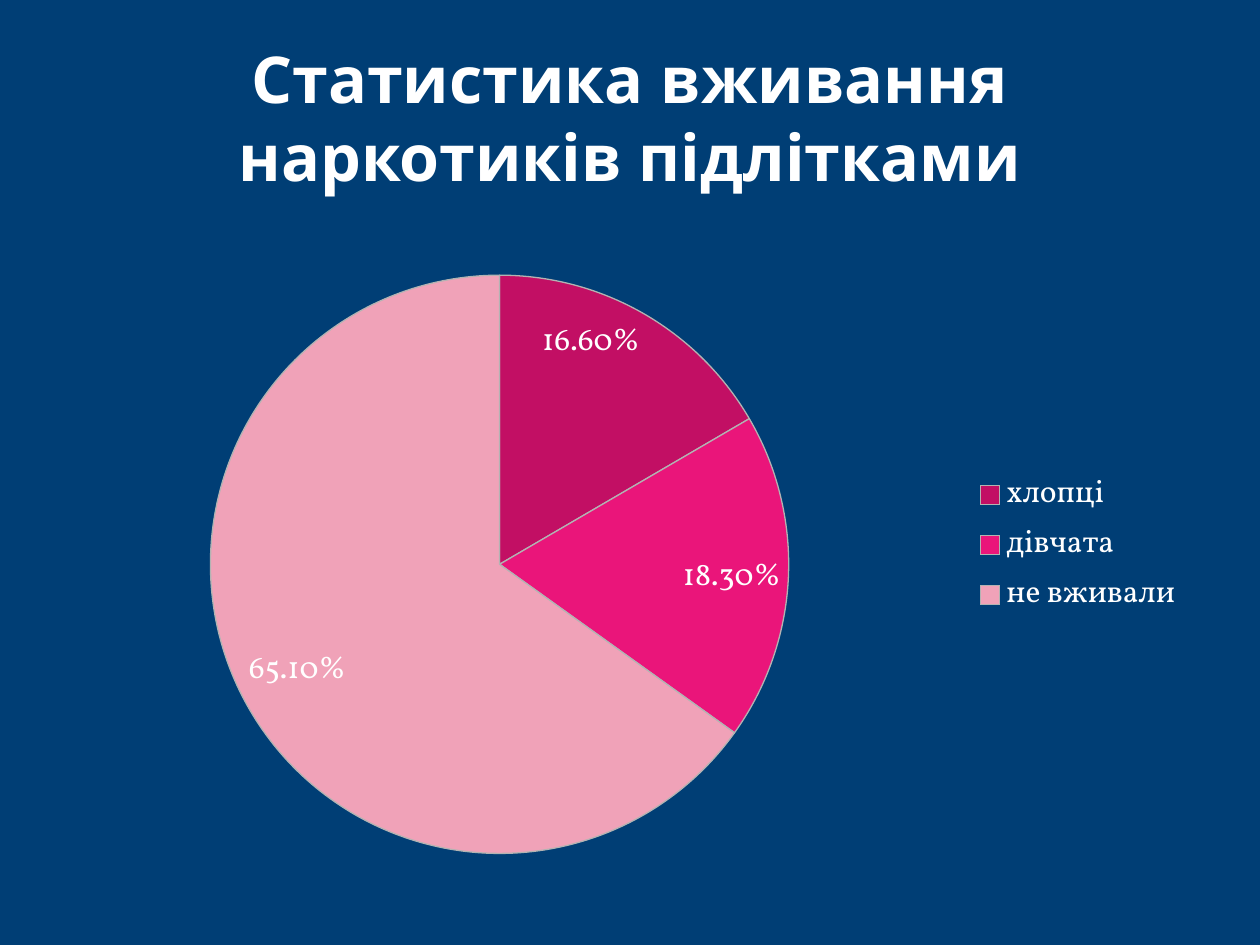
from lxml.etree import SubElement
from pptx import Presentation
from pptx.chart.data import CategoryChartData
from pptx.dml.color import RGBColor
from pptx.enum.chart import XL_CHART_TYPE as ChartType, XL_LABEL_POSITION as LabelPosition
from pptx.enum.chart import XL_LEGEND_POSITION as LegendPosition
from pptx.enum.text import MSO_ANCHOR as Anchor, PP_ALIGN as Align
from pptx.oxml.ns import qn
from pptx.util import Pt

TITLE = "Статистика вживання наркотиків підлітками"
SLICES = [
    ("хлопці", 0.166, "boys"),
    ("дівчата", 0.183, "girls"),
    ("не вживали", 0.651, "never"),
]
COLORS = {
    "background": "003E75",
    "text": "FFFFFF",
    "outline": "B3B3B3",
    "boys": "C20F64",
    "girls": "EA157A",
    "never": "F0A2B8",
}
TITLE_FONT, CHART_FONT = "Noto Sans", "Vollkorn"
LEFT, WIDTH = 36, 648
# Fractions of the chart area: x, y, w, h
PIE_AREA = (0.13, 0.08, 0.51, 0.9)
LEGEND_AREA = (0.8, 0.38, 0.19, 0.24)


def color(name):
    return RGBColor.from_string(COLORS[name])


def style_font(font, name, size, bold=False):
    font.name, font.size, font.bold = name, Pt(size), bold
    font.color.rgb = color("text")


def set_layout(element, area, inner=False):
    """Place a plot area or legend by fractions of the chart area."""
    layout = element.find(qn("c:layout"))
    if layout is None:
        layout = SubElement(element, qn("c:layout"))
        if not inner:
            element.find(qn("c:legendPos")).addnext(layout)
        else:
            element.insert(0, layout)
    manual = SubElement(layout, qn("c:manualLayout"))
    settings = [("layoutTarget", "inner")] if inner else []
    settings += [("xMode", "edge"), ("yMode", "edge"), *zip("xywh", area)]
    for tag, value in settings:
        SubElement(manual, qn(f"c:{tag}")).set("val", str(value))


def add_title(page):
    box = page.shapes.add_textbox(Pt(LEFT), Pt(21.6), Pt(WIDTH), Pt(90))
    frame = box.text_frame
    frame.word_wrap = True
    frame.vertical_anchor = Anchor.MIDDLE
    para = frame.paragraphs[0]
    para.text = TITLE
    para.alignment = Align.CENTER
    style_font(para.font, TITLE_FONT, 36.9, bold=True)


def add_pie(page):
    data = CategoryChartData(number_format="0.00%")
    data.categories = [name for name, _, _ in SLICES]
    data.add_series("Series 1", [share for _, share, _ in SLICES])
    chart = page.shapes.add_chart(
        ChartType.PIE, Pt(LEFT), Pt(126), Pt(WIDTH), Pt(370.8), data
    ).chart
    chart.has_title = False
    style_font(chart.font, CHART_FONT, 18)

    chart.has_legend = True
    legend = chart.legend
    legend.position = LegendPosition.RIGHT
    legend.include_in_layout = False
    style_font(legend.font, CHART_FONT, 18)

    plot = chart.plots[0]
    plot.vary_by_categories = True
    plot.has_data_labels = True
    labels = plot.data_labels
    labels.show_value, labels.show_percentage = True, False
    labels.number_format, labels.number_format_is_linked = "0.00%", False
    labels.position = LabelPosition.INSIDE_END
    style_font(labels.font, CHART_FONT, 18)

    for index, (_, _, key) in enumerate(SLICES):
        shape = plot.series[0].points[index].format
        shape.fill.solid()
        shape.fill.fore_color.rgb = color(key)
        shape.line.color.rgb = color("outline")
        shape.line.width = Pt(0.75)

    plot_area = chart.element.find(f".//{qn('c:plotArea')}")
    set_layout(plot_area, PIE_AREA, inner=True)
    set_layout(chart.element.find(f".//{qn('c:legend')}"), LEGEND_AREA)


def main():
    deck = Presentation()
    deck.slide_width, deck.slide_height = Pt(720), Pt(540)
    page = deck.slides.add_slide(deck.slide_layouts[6])
    page.background.fill.solid()
    page.background.fill.fore_color.rgb = color("background")
    add_title(page)
    add_pie(page)
    deck.save("out.pptx")


if __name__ == "__main__":
    main()
